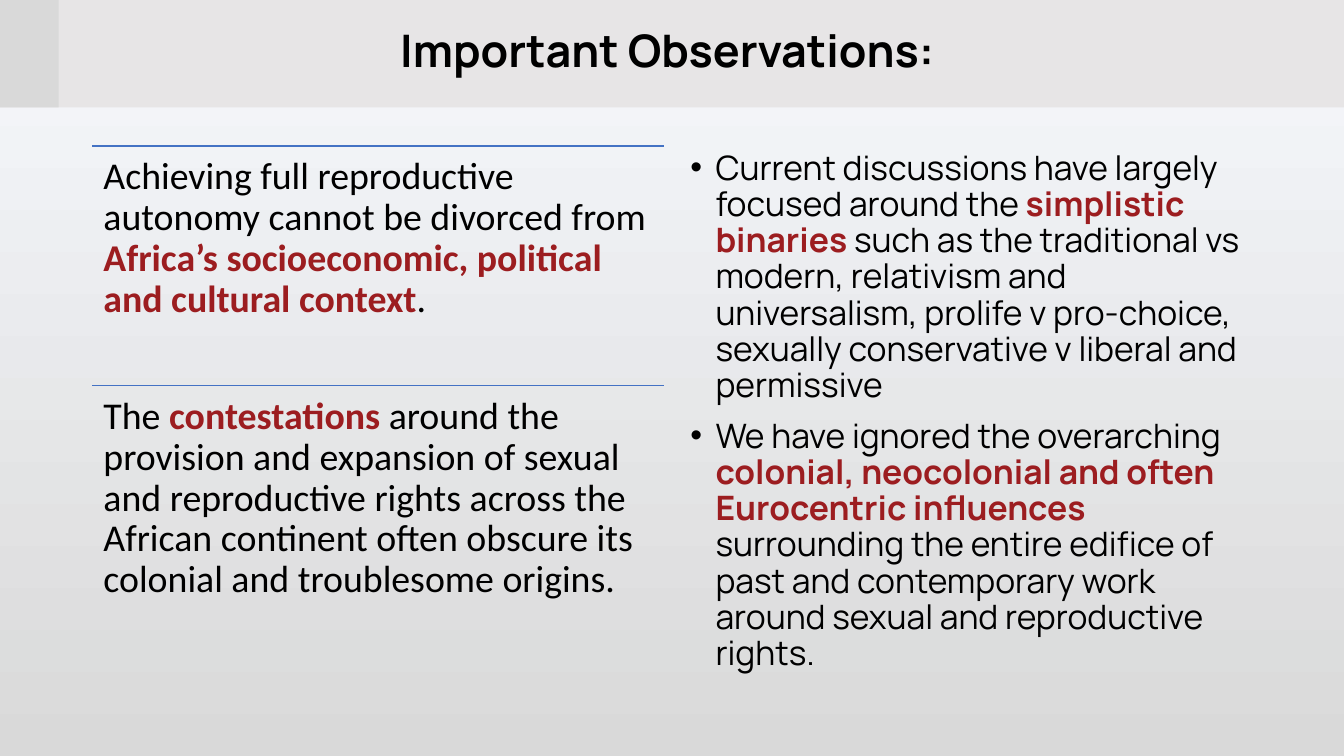
from dataclasses import dataclass

import lxml.etree
import pptx
import pptx.dml.color
import pptx.enum.shapes
import pptx.enum.text
import pptx.oxml.ns
import pptx.util

COLUMNS, ROWS = 160, 90
COLOURS = {
    "sky": "F6F8FC",
    "ground": "D9D9D9",
    "band": "E7E5E6",
    "rule": "4472C4",
    "ink": "000000",
    "accent": "9C1D20",
}
LEFT, RIGHT = 11, 81
HALF = 68
BODY_TOP, BODY_ROWS = 17.4, 57
BAND_ROWS = 12.8


@dataclass(frozen=True)
class Area:
    column: float
    row: float
    columns: float
    rows: float


@dataclass(frozen=True)
class Band:
    area: Area
    colour: str


BANDS = [
    Band(Area(0, 0, COLUMNS, BAND_ROWS), "band"),
    Band(Area(0, 0, 7, BAND_ROWS), "ground"),
]
STATEMENTS = [
    "Achieving full reproductive autonomy cannot be divorced from "
    "**Africa’s socioeconomic, political and cultural context**.",
    "The **contestations **around the provision and expansion of sexual and "
    "reproductive rights across the African continent often obscure its "
    "colonial and troublesome origins.",
]
DISCUSSIONS = [
    "Current discussions have largely focused around the **simplistic binaries **"
    "such as the traditional vs modern, relativism and universalism, prolife v "
    "pro-choice, sexually conservative v liberal and permissive",
    "We have ignored the overarching **colonial, neocolonial and often "
    "Eurocentric influences **surrounding the entire edifice of past and "
    "contemporary work around sexual and reproductive rights.",
]

deck = pptx.Presentation()
deck.slide_width = pptx.util.Inches(13.33)
deck.slide_height = pptx.util.Inches(7.5)
slide = deck.slides.add_slide(deck.slide_layouts[6])


def rgb(name: str) -> pptx.dml.color.RGBColor:
    return pptx.dml.color.RGBColor.from_string(COLOURS[name])


def across(columns: float) -> int:
    return round(deck.slide_width * columns / COLUMNS)


def down(rows: float) -> int:
    return round(deck.slide_height * rows / ROWS)


def place(area: Area) -> tuple[int, int, int, int]:
    return across(area.column), down(area.row), across(area.columns), down(area.rows)


def paint_background() -> None:
    backdrop = slide.background.fill
    backdrop.gradient()
    backdrop.gradient_angle = 270
    for stop, position, colour in zip(backdrop.gradient_stops, (0, 1), ("sky", "ground")):
        stop.position = position
        stop.color.rgb = rgb(colour)


def draw_band(band: Band) -> None:
    strip = slide.shapes.add_shape(
        pptx.enum.shapes.MSO_SHAPE.RECTANGLE, *place(band.area))
    strip.shadow.inherit = False
    strip.fill.solid()
    strip.fill.fore_color.rgb = rgb(band.colour)
    strip.line.fill.background()


def draw_rule(row: float) -> None:
    rule = slide.shapes.add_connector(
        pptx.enum.shapes.MSO_CONNECTOR.STRAIGHT,
        across(LEFT), down(row), across(LEFT + HALF), down(row))
    rule.line.color.rgb = rgb("rule")
    rule.line.width = pptx.util.Pt(1)
    lxml.etree.SubElement(rule._element.spPr, pptx.oxml.ns.qn("a:effectLst"))


def add_bullet(paragraph) -> None:
    properties = paragraph._p.get_or_add_pPr()
    indent = pptx.util.Inches(0.25)
    properties.set("marL", str(indent))
    properties.set("indent", str(-indent))
    lxml.etree.SubElement(properties, pptx.oxml.ns.qn("a:buFont")).set("typeface", "Arial")
    lxml.etree.SubElement(properties, pptx.oxml.ns.qn("a:buChar")).set("char", "•")


def write(texts: list[str], area: Area, *, font: str, size: float, bold: bool = False,
          centred: bool = False, middle: bool = False, bulleted: bool = False,
          inset: float | None = None, gap: float = 0) -> None:
    frame = slide.shapes.add_textbox(*place(area)).text_frame
    frame.word_wrap = True
    if middle:
        frame.vertical_anchor = pptx.enum.text.MSO_ANCHOR.MIDDLE
    if inset is not None:
        frame.margin_left = frame.margin_right = pptx.util.Inches(inset)
        frame.margin_top = frame.margin_bottom = pptx.util.Inches(inset)
    for index, text in enumerate(texts):
        paragraph = frame.add_paragraph() if index else frame.paragraphs[0]
        if bulleted:
            add_bullet(paragraph)
        paragraph.line_spacing = 0.9
        if centred:
            paragraph.alignment = pptx.enum.text.PP_ALIGN.CENTER
        if index:
            paragraph.space_before = pptx.util.Pt(gap)
        for part, words in enumerate(text.split("**")):
            stressed = part % 2 == 1
            run = paragraph.add_run()
            run.text = words
            run.font.name = font
            run.font.size = pptx.util.Pt(size)
            run.font.bold = bold or stressed
            run.font.color.rgb = rgb("accent" if stressed else "ink")


def main() -> None:
    paint_background()
    for band in BANDS:
        draw_band(band)
    write(["Important Observations: "], Area(LEFT, 2.75, 138, 7.2),
          font="Manrope", size=32, bold=True, centred=True, middle=True)
    statement_rows = BODY_ROWS / len(STATEMENTS)
    for index, statement in enumerate(STATEMENTS):
        top = BODY_TOP + index * statement_rows
        draw_rule(top)
        write([statement], Area(LEFT, top, HALF, statement_rows),
              font="Calibri", size=27, inset=0.11)
    write(DISCUSSIONS, Area(RIGHT, BODY_TOP, HALF, BODY_ROWS),
          font="Manrope", size=24, bulleted=True, gap=10)
    deck.save("out.pptx")


if __name__ == "__main__":
    main()
